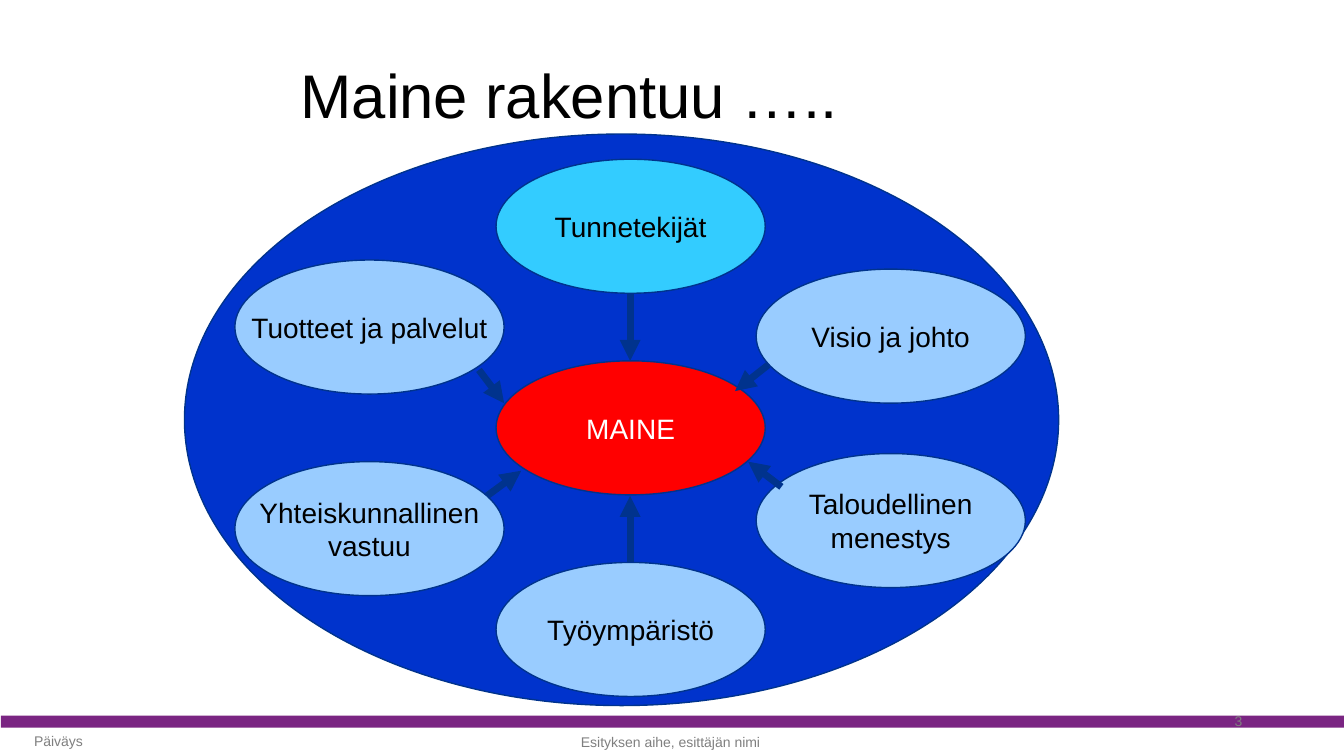
from lxml.etree import SubElement
from pptx import Presentation
from pptx.dml.color import RGBColor
from pptx.enum.shapes import MSO_CONNECTOR, MSO_SHAPE
from pptx.enum.text import MSO_ANCHOR, PP_ALIGN
from pptx.oxml.ns import qn
from pptx.util import Inches, Pt

BLACK = RGBColor(0x00, 0x00, 0x00)
WHITE = RGBColor(0xFF, 0xFF, 0xFF)
GRAY = RGBColor(0x7F, 0x7F, 0x7F)
PURPLE = RGBColor(0x7A, 0x25, 0x82)
NAVY = RGBColor(0x00, 0x33, 0x8D)
BLUE = RGBColor(0x00, 0x33, 0xCC)
LIGHT_BLUE = RGBColor(0x99, 0xCC, 0xFF)
CYAN = RGBColor(0x33, 0xCC, 0xFF)
RED = RGBColor(0xFF, 0x00, 0x00)
FONT = "Arial"

TITLE = "Maine rakentuu ….."
FOOTERS = [
    ("Päiväys", 0.24, 7.15, 1.96, PP_ALIGN.LEFT),
    ("Esityksen aihe, esittäjän nimi", 3.36, 7.16, 6.58, PP_ALIGN.CENTER),
    ("3", 9.42, 6.95, 3, PP_ALIGN.RIGHT),
]
LEFT, MIDDLE, RIGHT = 2.33, 4.92, 7.5
FACTOR_SIZE = (2.67, 1.33)
FACTORS = [
    ("Yhteiskunnallinen\nvastuu", LEFT, 4.58, LIGHT_BLUE, BLACK),
    ("Visio ja johto", RIGHT, 2.67, LIGHT_BLUE, BLACK),
    ("Taloudellinen\nmenestys", RIGHT, 4.5, LIGHT_BLUE, BLACK),
    ("Tunnetekijät", MIDDLE, 1.58, CYAN, BLACK),
    ("MAINE", MIDDLE, 3.58, RED, WHITE),
    ("Tuotteet ja palvelut", LEFT, 2.58, LIGHT_BLUE, BLACK),
    ("Työympäristö", MIDDLE, 5.58, LIGHT_BLUE, BLACK),
]
ARROWS = [
    (6.25, 5.58, 6.25, 4.92),
    (6.25, 2.92, 6.25, 3.58),
    (4.83, 4.92, 5.17, 4.67),
    (7.75, 4.83, 7.42, 4.58),
    (4.75, 3.67, 5, 4),
    (7.62, 3.62, 7.29, 3.88),
]


def write(shape, text, size, color, align, wrap=True):
    frame = shape.text_frame
    frame.word_wrap = wrap
    frame.vertical_anchor = MSO_ANCHOR.MIDDLE
    paragraph = frame.paragraphs[0]
    paragraph.text = text
    paragraph.alignment = align
    paragraph.font.name = FONT
    paragraph.font.size = Pt(size)
    paragraph.font.color.rgb = color
    return paragraph


def add_filled(slide, kind, box, fill, line=None):
    shape = slide.shapes.add_shape(kind, *map(Inches, box))
    shape.shadow.inherit = False
    shape.fill.solid()
    shape.fill.fore_color.rgb = fill
    if line is None:
        shape.line.fill.background()
    else:
        shape.line.color.rgb = line
        shape.line.width = Pt(1)
    return shape


def add_arrow(slide, ends):
    arrow = slide.shapes.add_connector(MSO_CONNECTOR.STRAIGHT, *map(Inches, ends))
    arrow.line.color.rgb = NAVY
    arrow.line.width = Pt(5)
    SubElement(arrow.line._get_or_add_ln(), qn("a:tailEnd"), type="triangle")
    SubElement(arrow._element.spPr, qn("a:effectLst"))


def main():
    deck = Presentation()
    deck.slide_width, deck.slide_height = Inches(13.33), Inches(7.5)
    slide = deck.slides.add_slide(deck.slide_layouts[5])

    title = slide.shapes.title
    title.left, title.top = Inches(2.88), Inches(0.5)
    title.width, title.height = Inches(9.75), Inches(0.96)
    write(title, TITLE, 44, BLACK, PP_ALIGN.LEFT).line_spacing = 0.9

    add_filled(slide, MSO_SHAPE.RECTANGLE, (0.01, 7.1, 13.33, 0.12), PURPLE)
    for text, left, top, width, align in FOOTERS:
        footer = slide.shapes.add_textbox(*map(Inches, (left, top, width, 0.4)))
        write(footer, text, 10, GRAY, align)

    add_filled(slide, MSO_SHAPE.OVAL, (1.83, 1.33, 8.67, 5.67), BLUE, NAVY)
    for text, left, top, fill, color in FACTORS:
        factor = add_filled(slide, MSO_SHAPE.OVAL, (left, top, *FACTOR_SIZE), fill, NAVY)
        write(factor, text, 20, color, PP_ALIGN.CENTER, wrap=False)
    for ends in ARROWS:
        add_arrow(slide, ends)

    deck.save("out.pptx")


if __name__ == "__main__":
    main()
